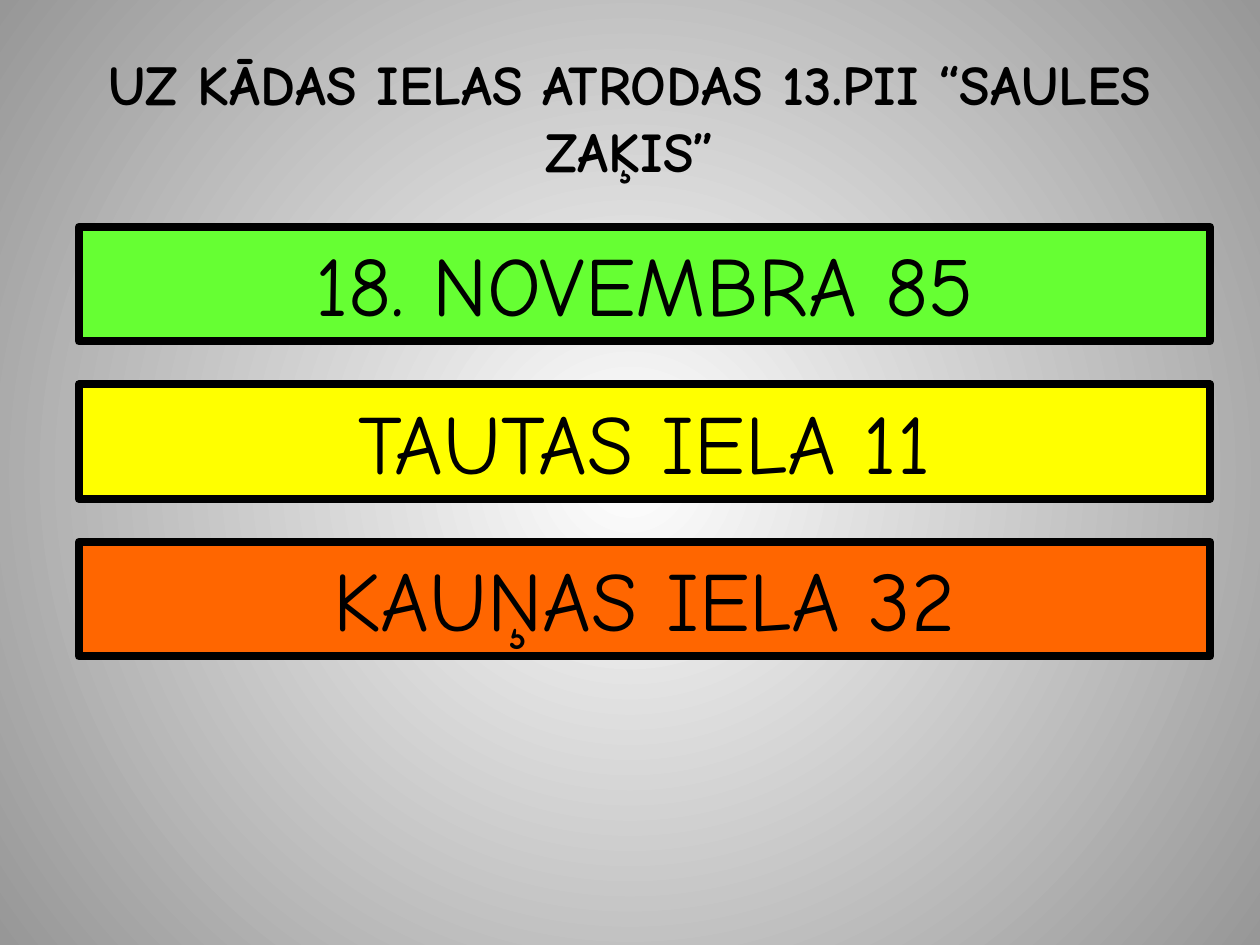
"""Build a quiz slide with a question and three coloured answer bars."""
from lxml.etree import SubElement
from pptx import Presentation
from pptx.dml.color import RGBColor
from pptx.enum.shapes import MSO_SHAPE
from pptx.enum.text import MSO_ANCHOR, MSO_AUTO_SIZE, PP_ALIGN
from pptx.oxml.ns import qn
from pptx.util import Pt

COLORS = {
    "black": "000000",
    "white": "FFFFFF",
    "gray": "979797",
    "green": "66FF33",
    "yellow": "FFFF00",
    "orange": "FF6600",
}
ANSWERS = [
    ("18. NOVEMBRA 85", "green"),
    ("TAUTAS IELA 11", "yellow"),
    ("KAUŅAS IELA 32", "orange"),
]
LEFT, TOP, WIDTH, HEIGHT, STEP = 45, 129.6, 646.5, 65.5, 90


class QuizSlide:
    font = "Comic Neue"
    title_size = 32
    answer_size = 48
    border = 4.5

    def __init__(self, prs):
        self.s = prs.slides.add_slide(prs.slide_layouts[5])

    def color(self, name):
        return RGBColor.from_string(COLORS[name])

    def background(self, center, edge):
        fill = self.s.background.fill
        fill.gradient()
        for stop, name in zip(fill.gradient_stops, (center, edge)):
            stop.color.rgb = self.color(name)
        grad = self.s.element.find(".//" + qn("a:gradFill"))
        grad.remove(grad.find(qn("a:lin")))
        circle = SubElement(grad, qn("a:path"), {"path": "circle"})
        SubElement(circle, qn("a:fillToRect"), dict.fromkeys("ltrb", "50000"))

    def set_text(self, tf, text, size, anchor, bold=False):
        tf.text = text
        tf.word_wrap = True
        tf.vertical_anchor = anchor
        p = tf.paragraphs[0]
        p.alignment = PP_ALIGN.CENTER
        font = p.runs[0].font
        font.name = self.font
        font.size = Pt(size)
        font.bold = bold
        font.color.rgb = self.color("black")

    def title(self, text, left, top, width, height):
        sp = self.s.shapes.title
        sp.left, sp.top, sp.width, sp.height = map(Pt, (left, top, width, height))
        self.set_text(sp.text_frame, text, self.title_size, MSO_ANCHOR.MIDDLE, bold=True)

    def answer(self, text, fill, left, top, width, height):
        box = map(Pt, (left, top, width, height))
        sp = self.s.shapes.add_shape(MSO_SHAPE.RECTANGLE, *box)
        sp.shadow.inherit = False
        sp.fill.solid()
        sp.fill.fore_color.rgb = self.color(fill)
        sp.line.color.rgb = self.color("black")
        sp.line.width = Pt(self.border)
        self.set_text(sp.text_frame, text, self.answer_size, MSO_ANCHOR.TOP)
        sp.text_frame.auto_size = MSO_AUTO_SIZE.SHAPE_TO_FIT_TEXT


def main():
    prs = Presentation()
    prs.slide_width, prs.slide_height = Pt(720), Pt(540)
    slide = QuizSlide(prs)
    slide.background("white", "gray")
    slide.title("UZ KĀDAS IELAS ATRODAS 13.PII “SAULES ZAĶIS”", 36, 21.6, 648, 90)
    for i, (text, fill) in enumerate(ANSWERS):
        slide.answer(text, fill, LEFT, TOP + i * STEP, WIDTH, HEIGHT)
    prs.save("out.pptx")


if __name__ == "__main__":
    main()
